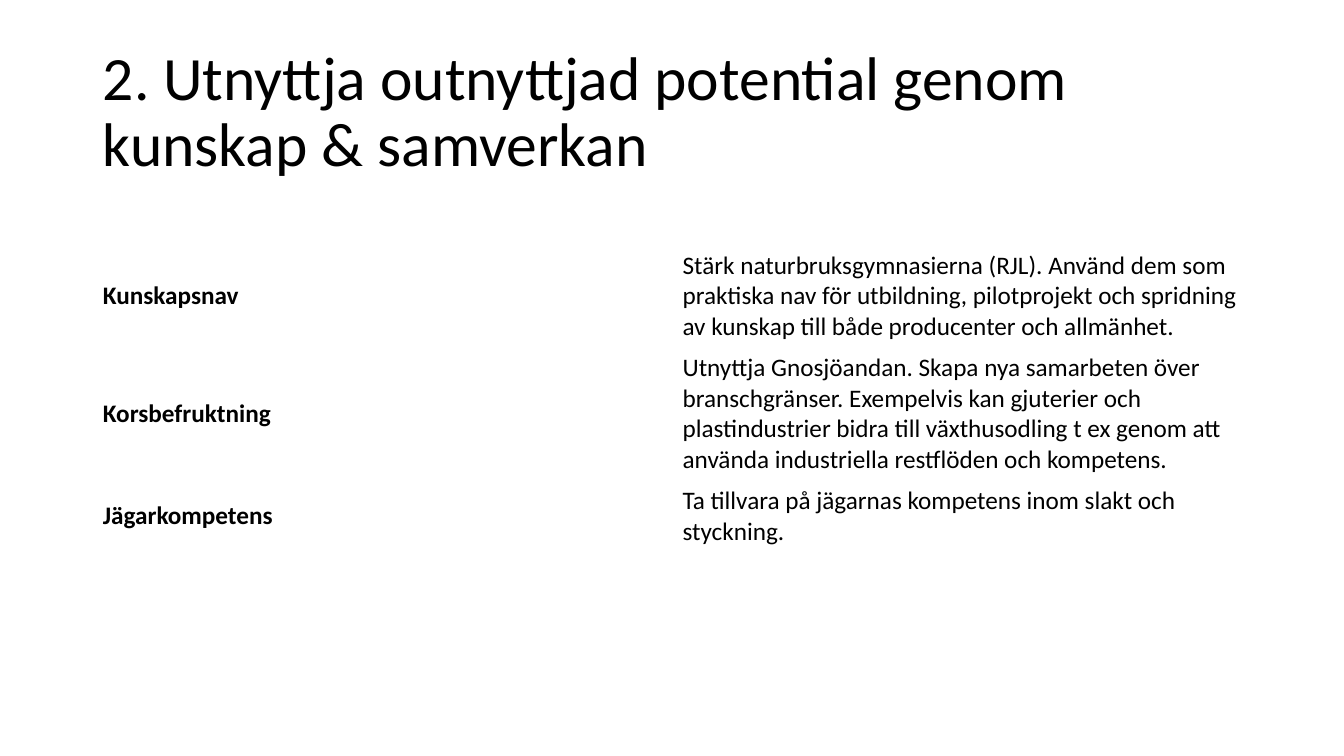
from dataclasses import dataclass

from pptx import Presentation
from pptx.dml.color import RGBColor
from pptx.enum.text import MSO_ANCHOR, MSO_AUTO_SIZE, PP_ALIGN
from pptx.util import Inches, Pt

MIDDLE = MSO_ANCHOR.MIDDLE
LEFT = PP_ALIGN.LEFT
FIXED = MSO_AUTO_SIZE.NONE

TITLE = "2. Utnyttja outnyttjad potential genom kunskap & samverkan"
ROWS = [
    ("Kunskapsnav",
     "Stärk naturbruksgymnasierna (RJL). Använd dem som praktiska nav för "
     "utbildning, pilotprojekt och spridning av kunskap till både "
     "producenter och allmänhet.", 3),
    ("Korsbefruktning",
     "Utnyttja Gnosjöandan. Skapa nya samarbeten över branschgränser. "
     "Exempelvis kan gjuterier och plastindustrier bidra till växthusodling "
     "t ex genom att använda industriella restflöden och kompetens.", 4),
    ("Jägarkompetens",
     "Ta tillvara på jägarnas kompetens inom slakt och styckning.", 2),
]


@dataclass(frozen=True)
class Theme:
    font: str = "Calibri"
    ink: RGBColor = RGBColor(0, 0, 0)
    head: int = 44
    body: int = 18


theme = Theme()
WIDTH, HEIGHT = 13.33, 7.5
EDGE = 0.92
SPAN = 11.5
TOP = 2.43
LINE, PAD = 0.3, 0.1


def write(frame, text, size=theme.body, bold=False, space=1.0):
    frame.word_wrap = True
    para = frame.paragraphs[0]
    para.alignment = LEFT
    para.line_spacing = space
    run = para.add_run()
    run.text = text
    font = run.font
    font.name = theme.font
    font.size = Pt(size)
    font.bold = bold
    font.color.rgb = theme.ink


def add_title(slide):
    title = slide.shapes.title
    title.left, title.top = Inches(EDGE), Inches(0.4)
    title.width, title.height = Inches(SPAN), Inches(1.45)
    frame = title.text_frame
    frame.auto_size = FIXED
    frame.vertical_anchor = MIDDLE
    write(frame, TITLE, size=theme.head, space=0.9)


def add_grid(slide):
    tall = [lines * LINE + PAD for *_, lines in ROWS]
    table = slide.shapes.add_table(
        len(ROWS), 2, Inches(EDGE), Inches(TOP),
        Inches(SPAN), Inches(sum(tall))).table
    table.first_row = False
    table.horz_banding = False
    for col in table.columns:
        col.width = Inches(SPAN / 2)
    for row, high, (label, text, _) in zip(table.rows, tall, ROWS):
        row.height = Inches(high)
        for cell, words, bold in zip(row.cells, (label, text), (True, False)):
            cell.fill.background()
            cell.vertical_anchor = MIDDLE
            write(cell.text_frame, words, bold=bold)


def main():
    deck = Presentation()
    deck.slide_width, deck.slide_height = Inches(WIDTH), Inches(HEIGHT)
    slide = deck.slides.add_slide(deck.slide_layouts[5])
    add_title(slide)
    add_grid(slide)
    deck.save("out.pptx")


if __name__ == "__main__":
    main()
